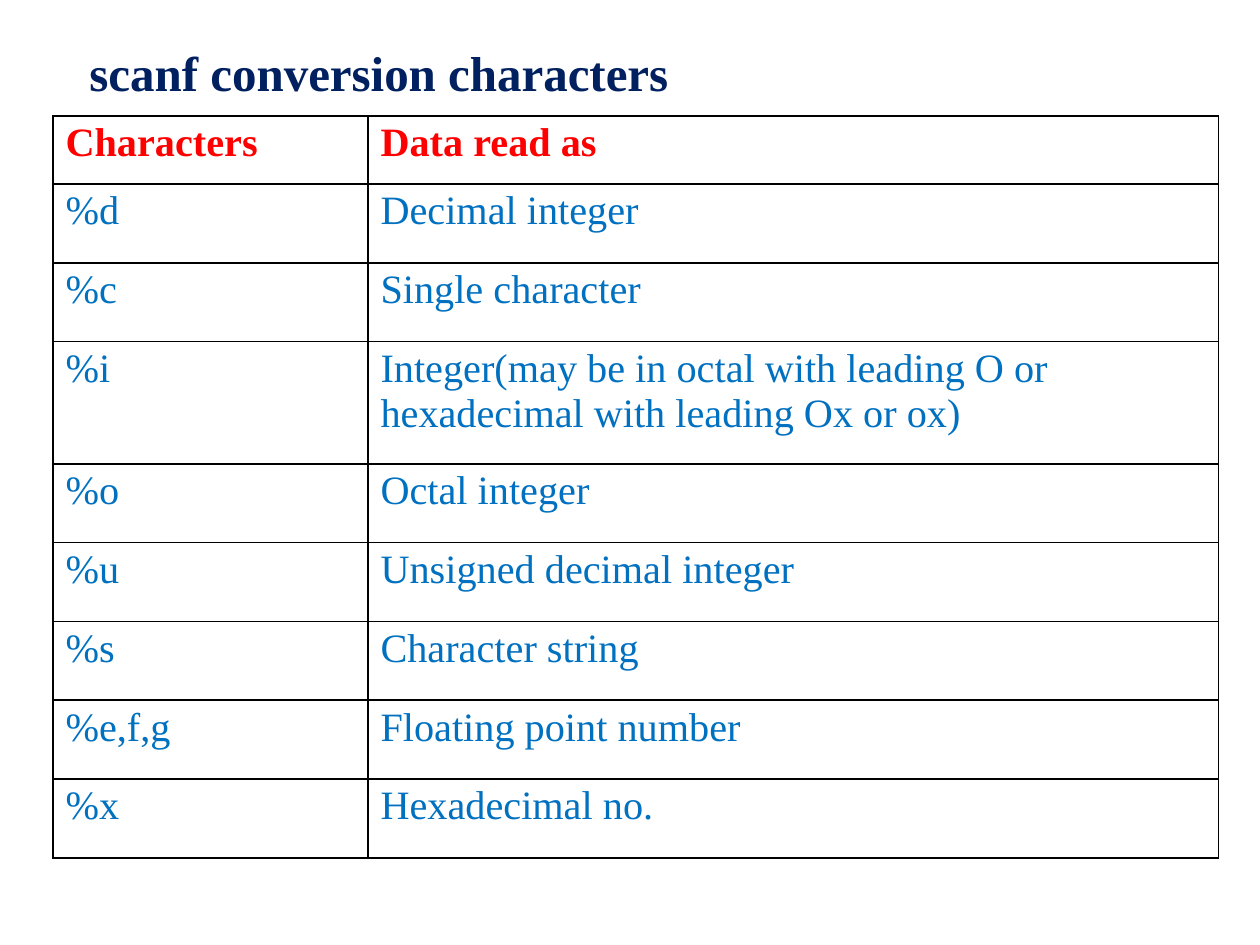
from lxml.etree import SubElement
from pptx import Presentation
from pptx.dml.color import RGBColor
from pptx.enum.text import MSO_ANCHOR, PP_ALIGN
from pptx.oxml.ns import qn
from pptx.util import Inches, Pt

# Content
TITLE = "scanf conversion characters"
ROWS = [
    ("Characters", "Data read as"),
    ("%d", "Decimal integer"),
    ("%c", "Single character"),
    ("%i", "Integer(may be in octal with leading O or "
           "hexadecimal with leading Ox or ox)"),
    ("%o", "Octal integer"),
    ("%u", "Unsigned decimal integer"),
    ("%s", "Character string"),
    ("%e,f,g", "Floating point number"),
    ("%x", "Hexadecimal no."),
]
NAVY, RED, BLUE, BLACK = "002060", "FF0000", "0070C0", "000000"

# Table measures in inches; rows without a fixed height share the rest
LEFT, TOP, HEIGHT = 0.42, 0.92, 5.89
COL_WIDTHS = (2.5, 6.75)
FIXED_HEIGHTS = {0: 0.54, 3: 0.97}
ROW_HEIGHT = (HEIGHT - sum(FIXED_HEIGHTS.values())) / (len(ROWS) - len(FIXED_HEIGHTS))


def set_text(tf, text, size, color, bold):
    tf.text = text
    p = tf.paragraphs[0]
    p.alignment = PP_ALIGN.LEFT
    font = p.runs[0].font
    font.name = "Times New Roman"
    font.size = Pt(size)
    font.bold = bold
    font.color.rgb = RGBColor.from_string(color)


def set_borders(cell, color, width):
    tc_pr = cell._tc.get_or_add_tcPr()
    for side in ("a:lnL", "a:lnR", "a:lnT", "a:lnB"):
        ln = SubElement(tc_pr, qn(side), w=str(Pt(width)))
        fill = SubElement(ln, qn("a:solidFill"))
        SubElement(fill, qn("a:srgbClr"), val=color)


def add_title(s):
    sp = s.shapes.title
    sp.left, sp.top = Inches(0.61), Inches(0.29)
    sp.width, sp.height = Inches(5.3), Inches(0.55)
    tf = sp.text_frame
    tf.margin_left = tf.margin_right = Inches(0.1)
    tf.margin_top = tf.margin_bottom = Inches(0.05)
    tf.vertical_anchor = MSO_ANCHOR.TOP
    tf.word_wrap = False
    set_text(tf, TITLE, 28, NAVY, True)


def add_conversion_table(s):
    table = s.shapes.add_table(
        len(ROWS), len(COL_WIDTHS), Inches(LEFT), Inches(TOP),
        Inches(sum(COL_WIDTHS)), Inches(HEIGHT)).table
    table.horz_banding = False
    for column, width in zip(table.columns, COL_WIDTHS):
        column.width = Inches(width)
    for i, texts in enumerate(ROWS):
        table.rows[i].height = Inches(FIXED_HEIGHTS.get(i, ROW_HEIGHT))
        header = i == 0
        for j, text in enumerate(texts):
            cell = table.cell(i, j)
            cell.margin_left = cell.margin_right = Inches(0.1)
            cell.margin_top = cell.margin_bottom = Inches(0.04)
            set_text(cell.text_frame, text, 23, RED if header else BLUE, header)
            # Borders must precede the fill in the cell properties
            set_borders(cell, BLACK, 1)
            cell.fill.background()


def main():
    prs = Presentation()
    prs.slide_width, prs.slide_height = Inches(10), Inches(7.5)
    s = prs.slides.add_slide(prs.slide_layouts[5])
    add_title(s)
    add_conversion_table(s)
    prs.save("out.pptx")


if __name__ == "__main__":
    main()
